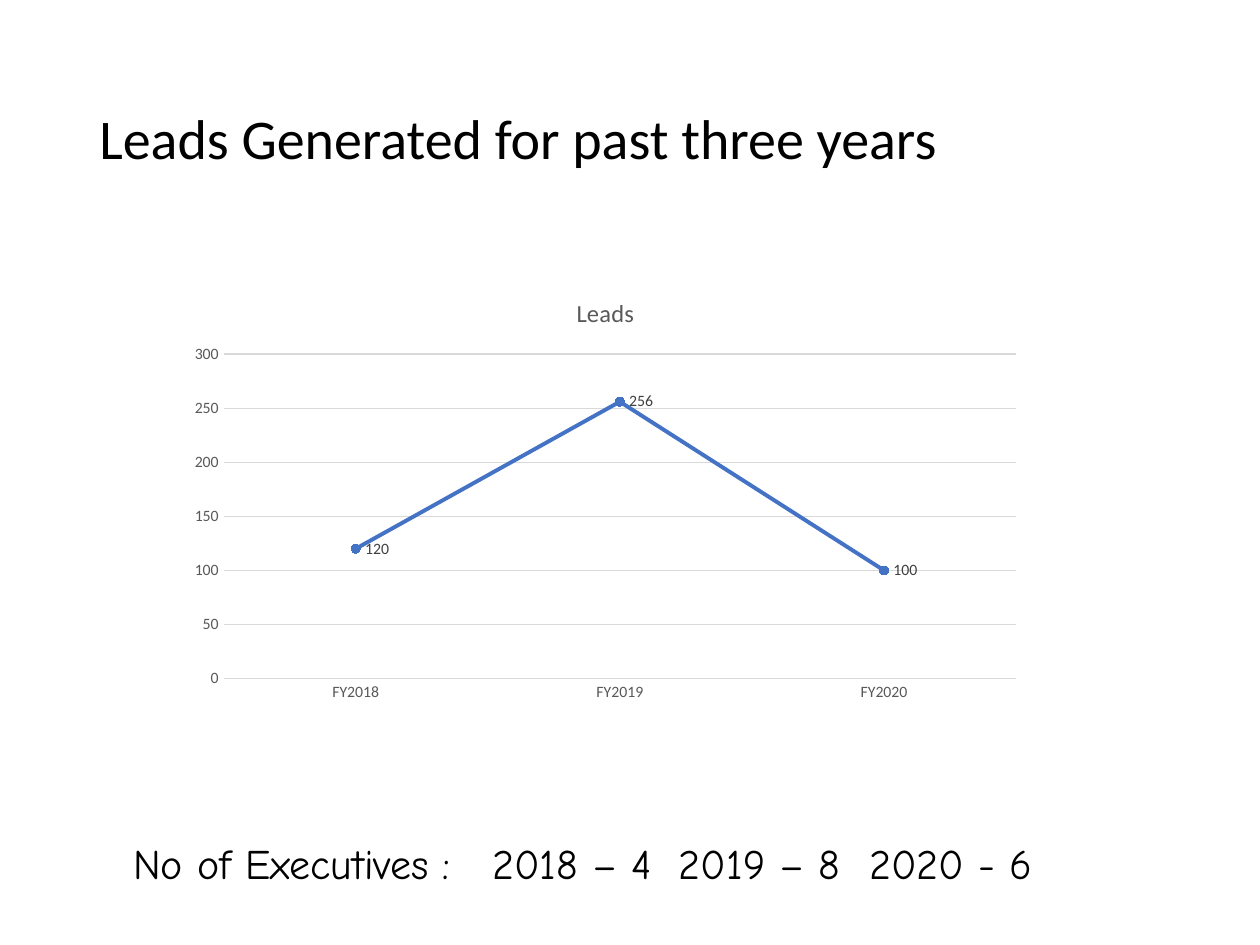
import pptx
import pptx.chart.data
import pptx.dml.color
import pptx.enum.chart
import pptx.enum.text
import pptx.oxml
import pptx.oxml.ns
import pptx.util
from pptx.util import Inches

BLACK = pptx.dml.color.RGBColor(0x00, 0x00, 0x00)
BLUE = pptx.dml.color.RGBColor(0x44, 0x72, 0xC4)
LABEL_GRAY = pptx.dml.color.RGBColor(0x40, 0x40, 0x40)
AXIS_GRAY = pptx.dml.color.RGBColor(0x59, 0x59, 0x59)
GRID_GRAY = pptx.dml.color.RGBColor(0xD9, 0xD9, 0xD9)

LEADS = {"FY2018": 120, "FY2019": 256, "FY2020": 100}
EXECUTIVES = ["No of Executives :", "2018 – 4", "2019 – 8", "2020 - 6"]
EXECUTIVE_STOPS = [Inches(2.85), Inches(4.33), Inches(5.84)]


def style_font(font, size, color, name="Calibri"):
    font_format = {"size": pptx.util.Pt(size), "name": name, "bold": False}
    for attribute, value in font_format.items():
        setattr(font, attribute, value)
    font.color.rgb = color


def style_line(line, color, width):
    line.color.rgb = color
    line.width = pptx.util.Pt(width)


def add_heading(slide, box):
    frame = slide.shapes.add_textbox(*box).text_frame
    frame.word_wrap = True
    frame.vertical_anchor = pptx.enum.text.MSO_ANCHOR.MIDDLE
    heading = frame.paragraphs[0]
    heading.text = "Leads Generated for past three years"
    heading.line_spacing = 0.9
    style_font(heading.font, 32, BLACK)


def add_leads_chart(slide, box):
    leads_data = pptx.chart.data.CategoryChartData()
    leads_data.categories = list(LEADS)
    leads_data.add_series("Leads", list(LEADS.values()))
    chart = slide.shapes.add_chart(
        pptx.enum.chart.XL_CHART_TYPE.LINE_MARKERS_STACKED, *box, leads_data
    ).chart
    style_font(chart.font, 10, BLACK)
    chart.has_legend = False

    # Chart title
    chart.has_title = True
    title = chart.chart_title.text_frame.paragraphs[0]
    title.text = "Leads"
    style_font(title.runs[0].font, 14, AXIS_GRAY)
    chart.chart_title.include_in_layout = False

    # Axes and gridlines
    for axis in (chart.category_axis, chart.value_axis):
        axis.major_tick_mark = pptx.enum.chart.XL_TICK_MARK.NONE
        axis.minor_tick_mark = pptx.enum.chart.XL_TICK_MARK.NONE
        style_font(axis.tick_labels.font, 9, AXIS_GRAY)
    style_line(chart.category_axis.format.line, GRID_GRAY, 0.75)
    chart.value_axis.format.line.fill.background()
    chart.value_axis.has_major_gridlines = True
    style_line(chart.value_axis.major_gridlines.format.line, GRID_GRAY, 0.75)

    # Leads line, markers and value labels
    plot = chart.plots[0]
    plot.vary_by_categories = False
    leads = plot.series[0]
    leads.smooth = False
    style_line(leads.format.line, BLUE, 2.25)
    leads.marker.style = pptx.enum.chart.XL_MARKER_STYLE.CIRCLE
    leads.marker.size = 5
    leads.marker.format.fill.solid()
    leads.marker.format.fill.fore_color.rgb = BLUE
    style_line(leads.marker.format.line, BLUE, 0.75)
    labels = leads.data_labels
    labels.show_value = True
    labels.position = pptx.enum.chart.XL_LABEL_POSITION.RIGHT
    style_font(labels.font, 9, LABEL_GRAY)


def add_executives(slide, box):
    frame = slide.shapes.add_textbox(*box).text_frame
    frame.word_wrap = True
    frame.auto_size = pptx.enum.text.MSO_AUTO_SIZE.SHAPE_TO_FIT_TEXT
    executives = frame.paragraphs[0]
    executives.text = "\t".join(EXECUTIVES)
    # Tab stops that line up the yearly counts
    properties = executives._p.get_or_add_pPr()
    stops = pptx.oxml.parse_xml(f"<a:tabLst {pptx.oxml.ns.nsdecls('a')}/>")
    for position in EXECUTIVE_STOPS:
        stop = stops.makeelement(pptx.oxml.ns.qn("a:tab"), {"pos": str(int(position)), "algn": "l"})
        stops.append(stop)
    properties.append(stops)
    style_font(executives.font, 24, BLACK, "Comic Neue")


def main():
    presentation = pptx.Presentation()
    presentation.slide_width = Inches(10)
    presentation.slide_height = Inches(7.5)
    slide = presentation.slides.add_slide(presentation.slide_layouts[6])
    add_heading(slide, (Inches(0.69), Inches(0.4), Inches(8.62), Inches(1.45)))
    add_leads_chart(slide, (Inches(1.41), Inches(2.19), Inches(6.79), Inches(3.45)))
    add_executives(slide, (Inches(0.96), Inches(6.6), Inches(8.09), Inches(0.5)))
    presentation.save("out.pptx")


if __name__ == "__main__":
    main()
